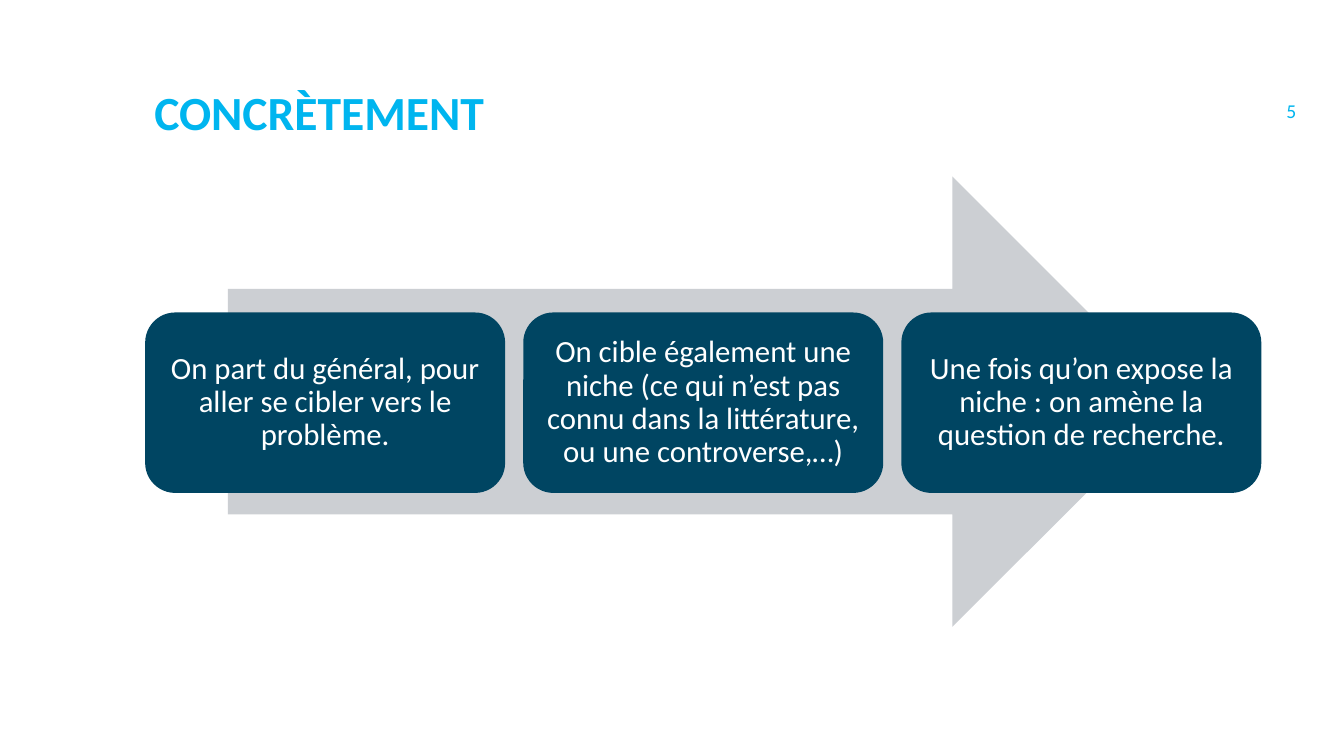
import pptx
import pptx.dml.color
import pptx.enum.shapes
import pptx.enum.text
import pptx.util

Inches = pptx.util.Inches
Pt = pptx.util.Pt
Align = pptx.enum.text.PP_ALIGN
Anchor = pptx.enum.text.MSO_ANCHOR
Preset = pptx.enum.shapes.MSO_SHAPE

CYAN = pptx.dml.color.RGBColor(0x00, 0xB5, 0xEF)
NAVY = pptx.dml.color.RGBColor(0x00, 0x45, 0x62)
GREY = pptx.dml.color.RGBColor(0xCC, 0xCF, 0xD3)
WHITE = pptx.dml.color.RGBColor(0xFF, 0xFF, 0xFF)

STEPS = [
    "On part du général, pour aller se cibler vers le problème.",
    "On cible également une niche (ce qui n’est pas connu dans la littérature, ou une controverse,…)",
    "Une fois qu’on expose la niche : on amène la question de recherche.",
]
STEP_LEFT, STEP_TOP = 1.44, 3.1
STEP_WIDTH, STEP_HEIGHT = 3.57, 1.79
STEP_PITCH = 3.75


def apply_format(target, values):
    for name, value in values.items():
        setattr(target, name, value)


def write_text(shape, text, size, color, frame_format, bold=False,
               alignment=Align.LEFT, line_spacing=1.0):
    frame = shape.text_frame
    apply_format(frame, {"word_wrap": True,
                         "auto_size": pptx.enum.text.MSO_AUTO_SIZE.NONE,
                         **frame_format})
    paragraph = frame.paragraphs[0]
    apply_format(paragraph, {"alignment": alignment, "line_spacing": line_spacing})
    run = paragraph.add_run()
    run.text = text
    apply_format(run.font, {"name": "Calibri", "size": Pt(size), "bold": bold})
    run.font.color.rgb = color


def add_filled_shape(slide, preset, left, top, width, height, color):
    shape = slide.shapes.add_shape(preset, Inches(left), Inches(top),
                                   Inches(width), Inches(height))
    shape.shadow.inherit = False
    shape.fill.solid()
    shape.fill.fore_color.rgb = color
    shape.line.fill.background()
    return shape


def add_step(slide, index, text):
    box = add_filled_shape(slide, Preset.ROUNDED_RECTANGLE,
                           STEP_LEFT + index * STEP_PITCH, STEP_TOP,
                           STEP_WIDTH, STEP_HEIGHT, NAVY)
    margins = {f"margin_{side}": Inches(0.12)
               for side in ("left", "top", "right", "bottom")}
    write_text(box, text, 22, WHITE, {"vertical_anchor": Anchor.MIDDLE, **margins},
               alignment=Align.CENTER, line_spacing=0.9)


def add_title(slide, text):
    title = slide.shapes.title
    apply_format(title, {"left": Inches(1.43), "top": Inches(0.8),
                         "width": Inches(11.08), "height": Inches(0.59)})
    write_text(title, text, 34, CYAN,
               {"vertical_anchor": Anchor.BOTTOM, "margin_top": 0, "margin_bottom": 0},
               bold=True)


def add_page_number(slide, text):
    box = slide.shapes.add_textbox(Inches(12.66), Inches(0.76),
                                   Inches(0.67), Inches(0.67))
    write_text(box, text, 14, CYAN, {"vertical_anchor": Anchor.MIDDLE})


def main():
    presentation = pptx.Presentation()
    presentation.slide_width = Inches(13.33)
    presentation.slide_height = Inches(7.5)
    slide = presentation.slides.add_slide(presentation.slide_layouts[5])
    add_title(slide, "CONCRÈTEMENT")
    add_page_number(slide, "5")
    add_filled_shape(slide, Preset.RIGHT_ARROW, 2.26, 1.75, 9.42, 4.47, GREY)
    for index, text in enumerate(STEPS):
        add_step(slide, index, text)
    presentation.save("out.pptx")


if __name__ == "__main__":
    main()
